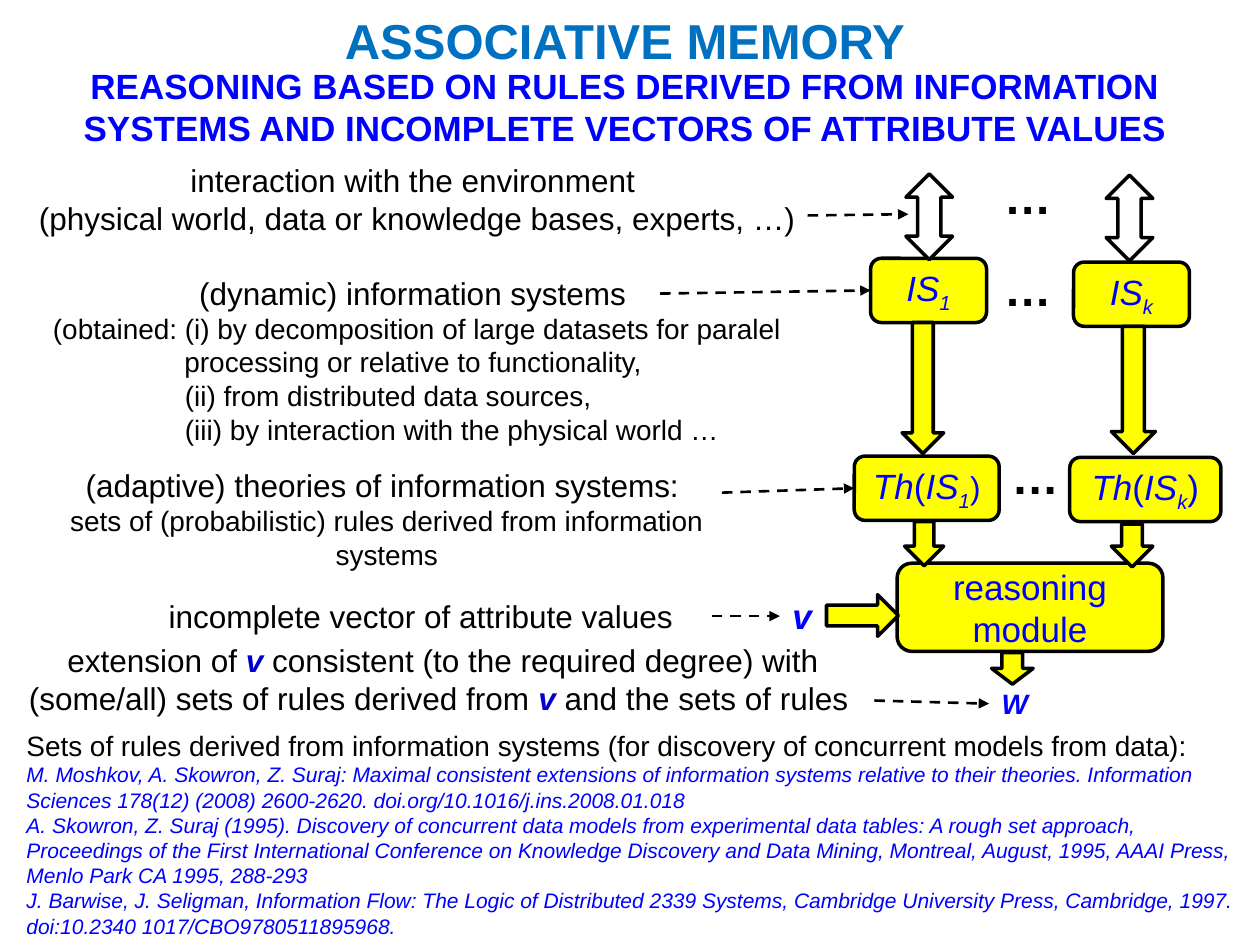
from dataclasses import dataclass

from lxml import etree
from pptx import Presentation, util as u
from pptx.dml.color import RGBColor
from pptx.enum import dml, shapes, text
from pptx.oxml.ns import qn

COLS, ROWS = 100, 75  # square grid over the slide
CENTER, LEFT = text.PP_ALIGN.CENTER, text.PP_ALIGN.LEFT
SHAPE = shapes.MSO_SHAPE


@dataclass(frozen=True)
class Theme:
    font: str = "Arial"
    title: str = "0070C0"
    blue: str = "0000FF"
    vector: str = "0000CC"
    black: str = "000000"
    yellow: str = "FFFF00"
    white: str = "FFFFFF"
    title_pt: int = 28
    dots_pt: int = 27
    head_pt: int = 20
    label_pt: int = 18
    detail_pt: int = 16
    ref_pt: int = 12
    outline_pt: float = 2
    link_pt: float = 1.5


T = Theme()


def grid(prs, *cells):
    """Turn alternating column and row counts into slide lengths."""
    units = (prs.slide_width / COLS, prs.slide_height / ROWS)
    return [u.Emu(round(c * units[i % 2])) for i, c in enumerate(cells)]


def run(words, pt=T.label_pt, color=T.black, style=""):
    """Describe a run; style letters: b bold, i italic, s subscript."""
    return words, pt, color, style


def add_par(tf, runs, align=LEFT, before=0, indent=0):
    first = tf.paragraphs[0]
    p = tf.add_paragraph() if first.runs else first
    p.alignment = align
    p.space_before = u.Pt(before)
    pPr = p._p.get_or_add_pPr()
    pPr.set("marL", str(indent))
    pPr.set("indent", "0")
    etree.SubElement(pPr, qn("a:buNone"))
    for words, pt, color, style in runs:
        r = p.add_run()
        r.text = words
        r.font.name, r.font.size = T.font, u.Pt(pt)
        r.font.color.rgb = RGBColor.from_string(color)
        r.font.bold, r.font.italic = "b" in style, "i" in style
        if "s" in style:
            r.font._element.set("baseline", "-25000")


def add_text(prs, s, box, *pars, align=LEFT):
    sp = s.shapes.add_textbox(*grid(prs, *box))
    sp.text_frame.word_wrap = True
    for runs in pars:
        add_par(sp.text_frame, runs, align)
    return sp


def fill_placeholder(prs, sp, box, pars, align, anchor):
    sp.left, sp.top, sp.width, sp.height = grid(prs, *box)
    tf = sp.text_frame
    tf.auto_size, tf.word_wrap = text.MSO_AUTO_SIZE.NONE, True
    tf.vertical_anchor = anchor
    for runs in pars:
        add_par(tf, runs, align)


def add_block(prs, s, kind, box, runs=(), fill=T.yellow):
    sp = s.shapes.add_shape(kind, *grid(prs, *box))
    sp.shadow.inherit = False
    sp.fill.solid()
    sp.fill.fore_color.rgb = RGBColor.from_string(fill)
    sp.line.color.rgb = RGBColor.from_string(T.black)
    sp.line.width = u.Pt(T.outline_pt)
    if runs:
        sp.text_frame.vertical_anchor = text.MSO_ANCHOR.MIDDLE
        add_par(sp.text_frame, runs, CENTER)
    return sp


def add_link(prs, s, start, end, target=None):
    """Dashed arrow, joined to the left side of the target if there is one."""
    cx = s.shapes.add_connector(shapes.MSO_CONNECTOR.STRAIGHT, *grid(prs, *start, *end))
    if target is not None:
        cx.end_connect(target, 1)
    cx.line.color.rgb = RGBColor.from_string(T.black)
    cx.line.width = u.Pt(T.link_pt)
    cx.line.dash_style = dml.MSO_LINE.DASH
    etree.SubElement(cx.line._get_or_add_ln(), qn("a:tailEnd"), type="triangle")
    etree.SubElement(cx._element.spPr, qn("a:effectLst"))


def add_headings(prs, s):
    fill_placeholder(prs, s.shapes.title, (-0.4, 1, 100, 4.4),
                     [[run("ASSOCIATIVE MEMORY", T.title_pt, T.title, "b")]],
                     CENTER, text.MSO_ANCHOR.MIDDLE)
    add_text(prs, s, (2.8, 4.6, 93.6, 7.7),
             [run("REASONING BASED ON RULES DERIVED FROM INFORMATION SYSTEMS "
                  "AND INCOMPLETE VECTORS OF ATTRIBUTE VALUES", T.head_pt, T.blue, "b")],
             align=CENTER)


def add_references(prs, s):
    refs = (
        "M. Moshkov, A. Skowron, Z. Suraj: Maximal consistent extensions of information systems "
        "relative to their theories. Information Sciences 178(12) (2008) 2600-2620. "
        "doi.org/10.1016/j.ins.2008.01.018",
        "A. Skowron, Z. Suraj (1995). Discovery of concurrent data models from experimental data "
        "tables: A rough set approach, Proceedings of the First International Conference on "
        "Knowledge Discovery and Data Mining, Montreal, August, 1995, AAAI Press, "
        "Menlo Park CA 1995, 288-293",
        "J. Barwise, J. Seligman, Information Flow: The Logic of Distributed 2339 Systems, "
        "Cambridge University Press, Cambridge, 1997. doi:10.2340 1017/CBO9780511895968.",
    )
    lead = run("Sets of rules derived from information systems "
               "(for discovery of concurrent models from data):", T.detail_pt)
    pars = [[lead]] + [[run(ref, T.ref_pt, T.blue, "i")] for ref in refs]
    fill_placeholder(prs, s.placeholders[1], (1.1, 57.3, 98, 17.8), pars,
                     LEFT, text.MSO_ANCHOR.TOP)


def add_explanations(prs, s):
    # Environment and information systems
    tf = add_text(prs, s, (1.4, 12.3, 63.4, 23.9),
                  [run("interaction with the environment ")],
                  [run("(physical world, data or knowledge bases, experts, …)")],
                  align=CENTER).text_frame
    add_par(tf, [run("(dynamic) information systems ")], CENTER, before=21)
    add_par(tf, [run("(obtained: (i) by decomposition of large datasets for paralel "
                     "processing or relative to functionality, ", T.detail_pt)], CENTER)
    for item in ("(ii) from distributed data sources,",
                 "(iii) by interaction with the physical world …"):
        add_par(tf, [run(item, T.detail_pt)], indent=grid(prs, 12.3)[0])
    # Theories
    add_text(prs, s, (2, 36.5, 57.4, 9.4),
             [run("(adaptive) theories of information systems: ")],
             [run("sets of (probabilistic) rules derived from information systems",
                  T.detail_pt)], align=CENTER)
    # Vector and its extension
    add_text(prs, s, (12.4, 46.9, 44.1, 4), [run("incomplete vector of attribute values")])
    v = run("v ", color=T.vector, style="bi")
    add_text(prs, s, (1.2, 50.4, 67.9, 7.1),
             [run("extension of "), v,
              run("consistent (to the required degree) with (some/all) sets of rules "
                  "derived from "), v, run("and the sets of rules ")], align=CENTER)


def system_runs(index):
    return [run("IS", T.head_pt, T.blue, "i"), run(index, T.head_pt, T.blue, "is")]


def theory_runs(index, close_pt):
    return [run("Th", T.head_pt, T.blue, "i"), run("(", T.head_pt, T.blue),
            *system_runs(index), run(")", close_pt, T.blue)]


def add_diagram(prs, s):
    # One column per information system: system, theory, then the arrows
    columns = (
        ("1", T.label_pt, (69.1, 20.5, 9.2, 5.1), (67.8, 36.2, 11.5, 5.1),
         (71.6, 25.6, 3.3, 10.4), (71.8, 41.4, 3.1, 3.5), (71.9, 13.8, 3.7, 6.8)),
        ("k", T.head_pt, (85.2, 20.8, 9.2, 5.1), (84.9, 36.3, 12, 5.1),
         (88.2, 25.9, 3.5, 10.1), (88.2, 41.6, 3.3, 3.4), (87.8, 13.9, 3.7, 6.8)),
    )
    module = (71.2, 44.7, 21.1, 7)
    add_block(prs, s, SHAPE.ROUNDED_RECTANGLE, module,
              [run("reasoning module", T.head_pt, T.blue)])
    systems, theories = [], []
    for index, close_pt, system, theory, derive, feed, exchange in columns:
        systems.append(add_block(prs, s, SHAPE.ROUNDED_RECTANGLE, system, system_runs(index)))
        theories.append(add_block(prs, s, SHAPE.ROUNDED_RECTANGLE, theory,
                                  theory_runs(index, close_pt)))
        for arrow in (derive, feed):
            add_block(prs, s, SHAPE.DOWN_ARROW, arrow)
        add_block(prs, s, SHAPE.UP_DOWN_ARROW, exchange, fill=T.white)
    for left, top in ((78.7, 12.8), (78.7, 20.1), (79.3, 35)):
        add_text(prs, s, (left, top, 6.2, 4.5), [run("…", T.dots_pt, style="b")])

    # Input and output of the reasoning module
    add_block(prs, s, SHAPE.RIGHT_ARROW, (65.6, 47.2, 5.7, 3.3))
    add_block(prs, s, SHAPE.DOWN_ARROW, (78.7, 51.8, 3.3, 2.5))
    v = add_text(prs, s, (61.9, 46.7, 3.9, 4.4), [run("v", T.head_pt, T.blue, "bi")])
    w = add_text(prs, s, (78.5, 54, 4.5, 3.7), [run("W", T.detail_pt, T.blue, "bi")])

    # Links from the explanations
    add_link(prs, s, (64.1, 17.1), (72.1, 17))
    for start, end, target in (((52.4, 23.3), (69.1, 23), systems[0]),
                               ((57.3, 39.1), (67.8, 39), theories[0]),
                               ((56.5, 48.9), (61.9, 48.8), v),
                               ((69.4, 55.6), (78.1, 55.7), w)):
        add_link(prs, s, start, end, target)


def main():
    prs = Presentation()
    prs.slide_width, prs.slide_height = u.Inches(10), u.Inches(7.5)
    s = prs.slides.add_slide(prs.slide_layouts[1])
    add_headings(prs, s)
    add_references(prs, s)
    add_explanations(prs, s)
    add_diagram(prs, s)
    prs.save("out.pptx")


if __name__ == "__main__":
    main()
